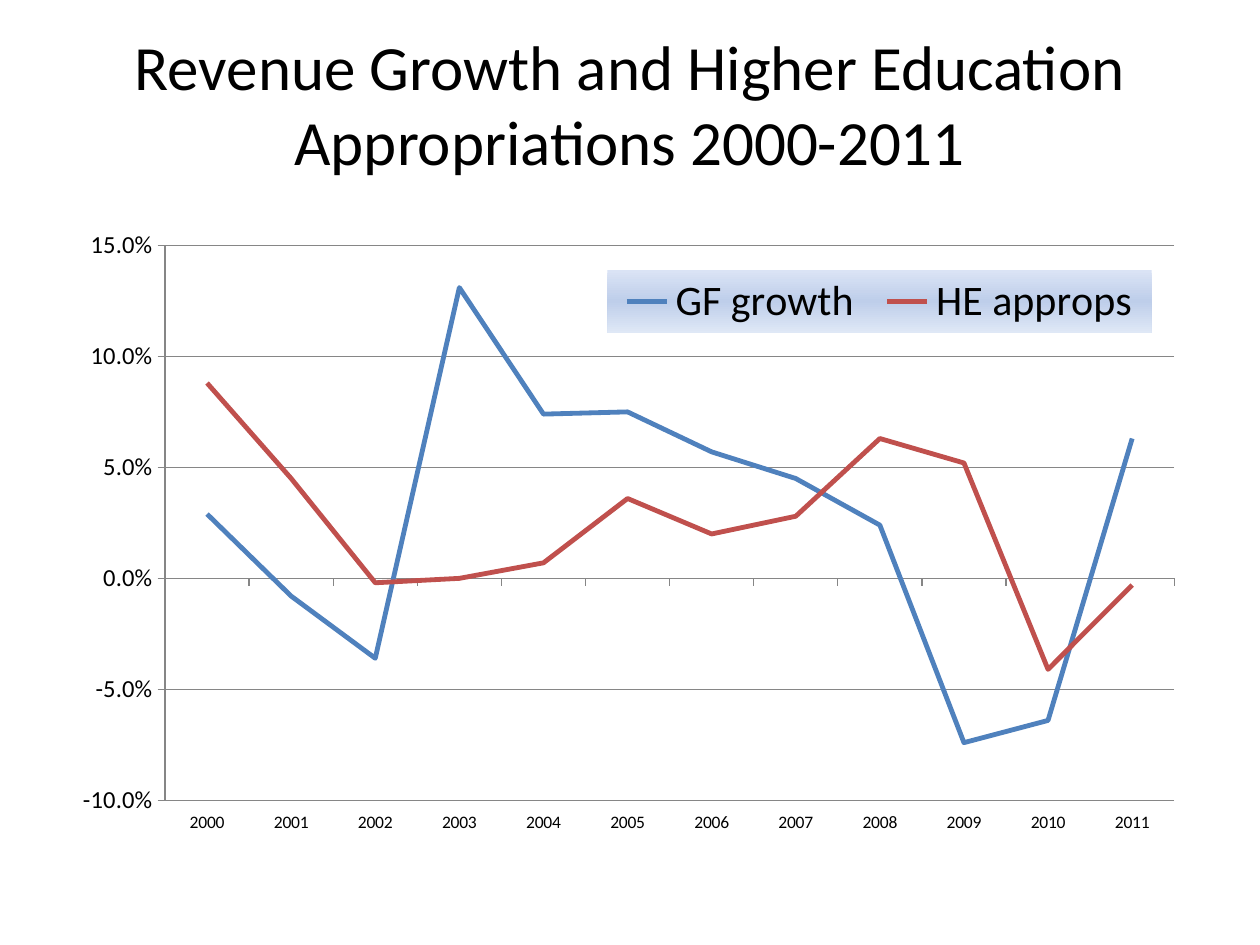
from dataclasses import dataclass

from lxml.etree import SubElement
from pptx import Presentation
from pptx.chart.data import CategoryChartData
from pptx.dml.color import RGBColor
from pptx.enum.chart import XL_CHART_TYPE, XL_LEGEND_POSITION as LegendPos
from pptx.enum.chart import XL_TICK_LABEL_POSITION as LabelPos, XL_TICK_MARK as Tick
from pptx.enum.text import MSO_ANCHOR, PP_ALIGN
from pptx.oxml import parse_xml
from pptx.oxml.ns import nsdecls, qn
from pptx.util import Inches, Pt


@dataclass(frozen=True)
class Theme:
    font: str = "Calibri"
    text: str = "000000"
    axis: str = "868686"
    series: tuple = ("4F81BD", "C0504D")
    legend_stops: tuple = ((0, "DAE3F5"), (50, "BECEEA"), (100, "DFE8F6"))
    title_size: int = 36
    category_size: int = 10
    value_size: int = 14
    legend_size: int = 24
    series_width: float = 2.75
    axis_width: float = 0.75


THEME = Theme()
TITLE = "Revenue Growth and Higher Education Appropriations 2000-2011"
YEARS = [str(year) for year in range(2000, 2012)]
RATES = {
    "GF growth": (0.029, -0.008, -0.036, 0.131, 0.074, 0.075,
                  0.057, 0.045, 0.024, -0.074, -0.064, 0.063),
    "HE approps": (0.088, 0.045, -0.002, 0, 0.007, 0.036,
                   0.02, 0.028, 0.063, 0.052, -0.041, -0.003),
}


def style_font(font, size):
    font.name = THEME.font
    font.size = Pt(size)
    font.color.rgb = RGBColor.from_string(THEME.text)


def style_line(line, color, width):
    line.color.rgb = RGBColor.from_string(color)
    line.width = Pt(width)


def add_title(page):
    box = page.shapes.add_textbox(Inches(0.5), Inches(0.3), Inches(9), Inches(1.03))
    frame = box.text_frame
    frame.word_wrap = True
    frame.vertical_anchor = MSO_ANCHOR.MIDDLE
    frame.text = TITLE
    para = frame.paragraphs[0]
    para.alignment = PP_ALIGN.CENTER
    style_font(para.runs[0].font, THEME.title_size)


def manual_layout(x, y, width, height, inner=False):
    """Return a chart layout whose lengths are fractions of the chart."""
    layout = parse_xml(f"<c:layout {nsdecls('c')}><c:manualLayout/></c:layout>")
    values = {"xMode": "edge", "yMode": "edge", "x": x, "y": y, "w": width, "h": height}
    if inner:
        values = {"layoutTarget": "inner", **values}
    for tag, value in values.items():
        SubElement(layout[0], qn(f"c:{tag}"), val=str(value))
    return layout


def remove_layout(element):
    for layout in element.findall(qn("c:layout")):
        element.remove(layout)


def place_plot(chart):
    plot_area = chart.element.find(f"{qn('c:chart')}/{qn('c:plotArea')}")
    remove_layout(plot_area)
    plot_area.insert(0, manual_layout(0.09, 0.04, 0.89, 0.89, inner=True))


def add_legend(chart):
    chart.has_legend = True
    legend = chart.legend
    legend.position = LegendPos.TOP
    legend.include_in_layout = False
    style_font(legend.font, THEME.legend_size)
    element = chart.element.find(f"{qn('c:chart')}/{qn('c:legend')}")
    remove_layout(element)
    element.find(qn("c:legendPos")).addnext(manual_layout(0.48, 0.08, 0.48, 0.1))
    overlay = element.find(qn("c:overlay"))
    overlay.set("val", "1")
    stops = "".join(f'<a:gs pos="{percent * 1000}"><a:srgbClr val="{color}"/></a:gs>'
                    for percent, color in THEME.legend_stops)
    overlay.addnext(parse_xml(
        f"<c:spPr {nsdecls('c', 'a')}><a:gradFill><a:gsLst>{stops}</a:gsLst>"
        '<a:lin ang="5400000" scaled="0"/></a:gradFill></c:spPr>'))


def style_axes(chart):
    years, rates = chart.category_axis, chart.value_axis
    for axis, size in ((years, THEME.category_size), (rates, THEME.value_size)):
        axis.major_tick_mark = Tick.OUTSIDE
        axis.minor_tick_mark = Tick.NONE
        style_font(axis.tick_labels.font, size)
        style_line(axis.format.line, THEME.axis, THEME.axis_width)
    years.tick_label_position = LabelPos.LOW
    rates.minimum_scale, rates.maximum_scale, rates.major_unit = -0.1, 0.15, 0.05
    rates.tick_labels.number_format = "0.0%"
    rates.tick_labels.number_format_is_linked = False
    rates.has_major_gridlines = True
    style_line(rates.major_gridlines.format.line, THEME.axis, THEME.axis_width)


def add_rate_chart(page):
    data = CategoryChartData(number_format="0.0%")
    data.categories = YEARS
    for name, values in RATES.items():
        data.add_series(name, values)
    chart = page.shapes.add_chart(XL_CHART_TYPE.LINE, Inches(0.5), Inches(1.75),
                                  Inches(9), Inches(4.95), data).chart
    chart.has_title = False
    style_font(chart.font, THEME.category_size)
    chart.plots[0].vary_by_categories = False
    for series, color in zip(chart.plots[0].series, THEME.series):
        series.smooth = False
        style_line(series.format.line, color, THEME.series_width)
    style_axes(chart)
    place_plot(chart)
    add_legend(chart)


def main():
    deck = Presentation()
    deck.slide_width, deck.slide_height = Inches(10), Inches(7.5)
    page = deck.slides.add_slide(deck.slide_layouts[6])
    add_title(page)
    add_rate_chart(page)
    deck.save("out.pptx")


if __name__ == "__main__":
    main()
